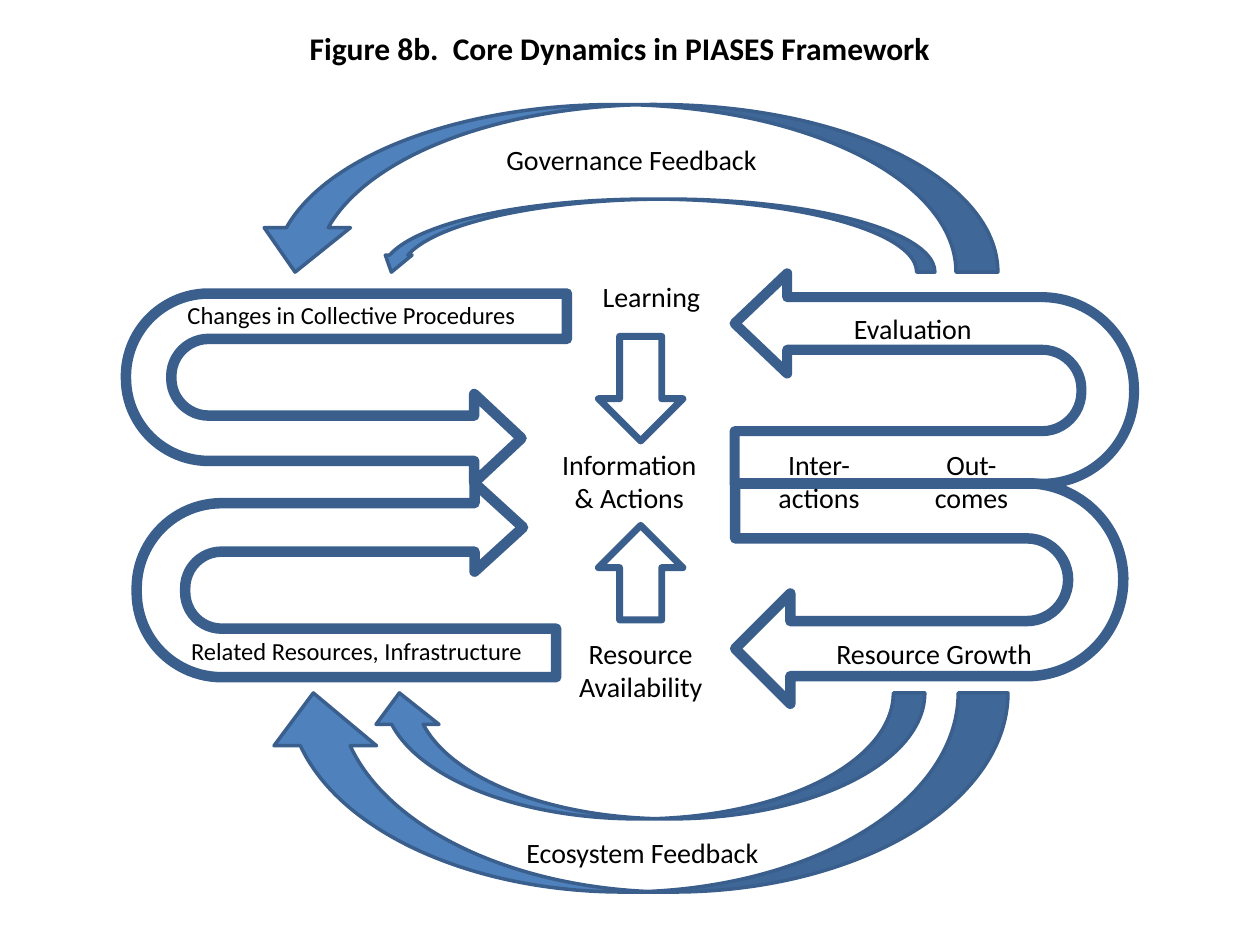
from dataclasses import dataclass

from pptx import Presentation
from pptx.dml.color import RGBColor
from pptx.enum.shapes import MSO_SHAPE
from pptx.enum.text import MSO_ANCHOR, MSO_AUTO_SIZE, PP_ALIGN
from pptx.util import Inches, Pt

COLORS = {"outline": "3A5F8C", "fill": "4F81BD", "text": "000000", "white": "FFFFFF"}
FONT = "Calibri"


@dataclass
class Arrow:
    kind: MSO_SHAPE
    box: tuple[float, float, float, float]
    weight: float
    flip: str = ""
    rotation: int = 0
    adjustments: tuple[float, ...] = ()
    fill: str | None = None


@dataclass
class Label:
    text: str
    box: tuple[float, float, float, float]
    size: int = 16
    align: PP_ALIGN = PP_ALIGN.CENTER
    anchor: MSO_ANCHOR = MSO_ANCHOR.TOP


UTURN, DOWN, CURVED = MSO_SHAPE.U_TURN_ARROW, MSO_SHAPE.DOWN_ARROW, MSO_SHAPE.CURVED_DOWN_ARROW
WIDE_BEND = (0.25, 0.515, 0.265)

# Four loops around the centre
LOOPS = [
    Arrow(UTURN, (6.58, 1.42, 1.67, 3.17), 5.75, "v", 270, (0.25, 0.238, 0.25, 0.438, 1)),
    Arrow(UTURN, (6.5, 3.17, 1.75, 3.08), 6, "hv", 270, (0.25, 0.25, 0.25, 0.438, 1)),
    Arrow(UTURN, (2, 1.33, 1.5, 3.5), 6, "v", 90, (0.24, 0.234, 0.25, 0.438, 0.897)),
    Arrow(UTURN, (1.98, 2.94, 1.54, 3.33), 6, "hv", 90, (0.25, 0.228, 0.25, 0.438, 0.921)),
]

# Arrows into the centre, then the feedback arcs above and below
FLOWS = [
    Arrow(DOWN, (4.75, 2.67, 0.67, 0.83), 4),
    Arrow(DOWN, (4.75, 4.17, 0.67, 0.75), 4, "v"),
    Arrow(CURVED, (3, 1.58, 4.42, 0.58), 2, "h", 0, (0.25, 0.366, 0.233), "fill"),
    Arrow(CURVED, (2, 0.83, 5.92, 1.33), 2, "h", 0, WIDE_BEND, "fill"),
    Arrow(CURVED, (2.92, 5.5, 4.42, 1), 2, "hv", 0, (), "fill"),
    Arrow(CURVED, (2.08, 5.5, 5.92, 1.58), 2, "hv", 0, WIDE_BEND, "fill"),
]

LABELS = [
    Label("Information & Actions", (4.33, 3.5, 1.33, 0.64)),
    Label("Learning", (4.67, 2.17, 1, 0.37)),
    Label("Changes in Collective Procedures", (1.08, 2.33, 3.42, 0.34), 14,
          anchor=MSO_ANCHOR.MIDDLE),
    Label("Inter-actions", (6, 3.5, 1, 0.64)),
    Label("Out-comes", (7.25, 3.5, 0.92, 0.64)),
    Label("Related Resources, Infrastructure", (1.33, 5, 3, 0.34), 14),
    Label("Evaluation", (6.58, 2.42, 1.33, 0.37)),
    Label("Resource Availability", (4.42, 5, 1.33, 0.64)),
    Label("Resource Growth", (6.33, 5, 2.17, 0.37)),
    Label("Ecosystem Feedback", (4.08, 6.58, 2.25, 0.37), align=PP_ALIGN.LEFT),
    Label("Governance Feedback", (3.92, 1.08, 2.25, 0.37), align=PP_ALIGN.LEFT),
]


def color(name: str) -> RGBColor:
    return RGBColor.from_string(COLORS[name])


def write(sp, text: str, size: int, align: PP_ALIGN, anchor: MSO_ANCHOR, bold: bool = False) -> None:
    tf = sp.text_frame
    tf.word_wrap = True
    tf.vertical_anchor = anchor
    tf.text = text
    p = tf.paragraphs[0]
    p.alignment = align
    font = p.runs[0].font
    font.name, font.size, font.bold = FONT, Pt(size), bold
    font.color.rgb = color("text")


def add_title(s, text: str) -> None:
    sp = s.shapes.add_shape(MSO_SHAPE.RECTANGLE, *map(Inches, (0.42, 0.17, 9, 0.42)))
    sp.shadow.inherit = False
    sp.fill.background()
    sp.line.color.rgb = color("white")
    sp.line.width = Pt(1.5)
    write(sp, text, 18, PP_ALIGN.CENTER, MSO_ANCHOR.MIDDLE, bold=True)


def add_arrow(s, arrow: Arrow) -> None:
    sp = s.shapes.add_shape(arrow.kind, *map(Inches, arrow.box))
    sp.shadow.inherit = False
    sp.rotation = arrow.rotation
    for axis in arrow.flip:
        sp._element.spPr.xfrm.set("flip" + axis.upper(), "1")
    for i, value in enumerate(arrow.adjustments):
        sp.adjustments[i] = value
    if arrow.fill:
        sp.fill.solid()
        sp.fill.fore_color.rgb = color(arrow.fill)
    else:
        sp.fill.background()
    sp.line.color.rgb = color("outline")
    sp.line.width = Pt(arrow.weight)


def add_label(s, label: Label) -> None:
    sp = s.shapes.add_textbox(*map(Inches, label.box))
    write(sp, label.text, label.size, label.align, label.anchor)
    sp.text_frame.auto_size = MSO_AUTO_SIZE.SHAPE_TO_FIT_TEXT


def main() -> None:
    prs = Presentation()
    prs.slide_width, prs.slide_height = Inches(10), Inches(7.5)
    s = prs.slides.add_slide(prs.slide_layouts[6])
    add_title(s, "Figure 8b.  Core Dynamics in PIASES Framework")
    for arrow in LOOPS + FLOWS:
        add_arrow(s, arrow)
    for label in LABELS:
        add_label(s, label)
    prs.save("out.pptx")


if __name__ == "__main__":
    main()
